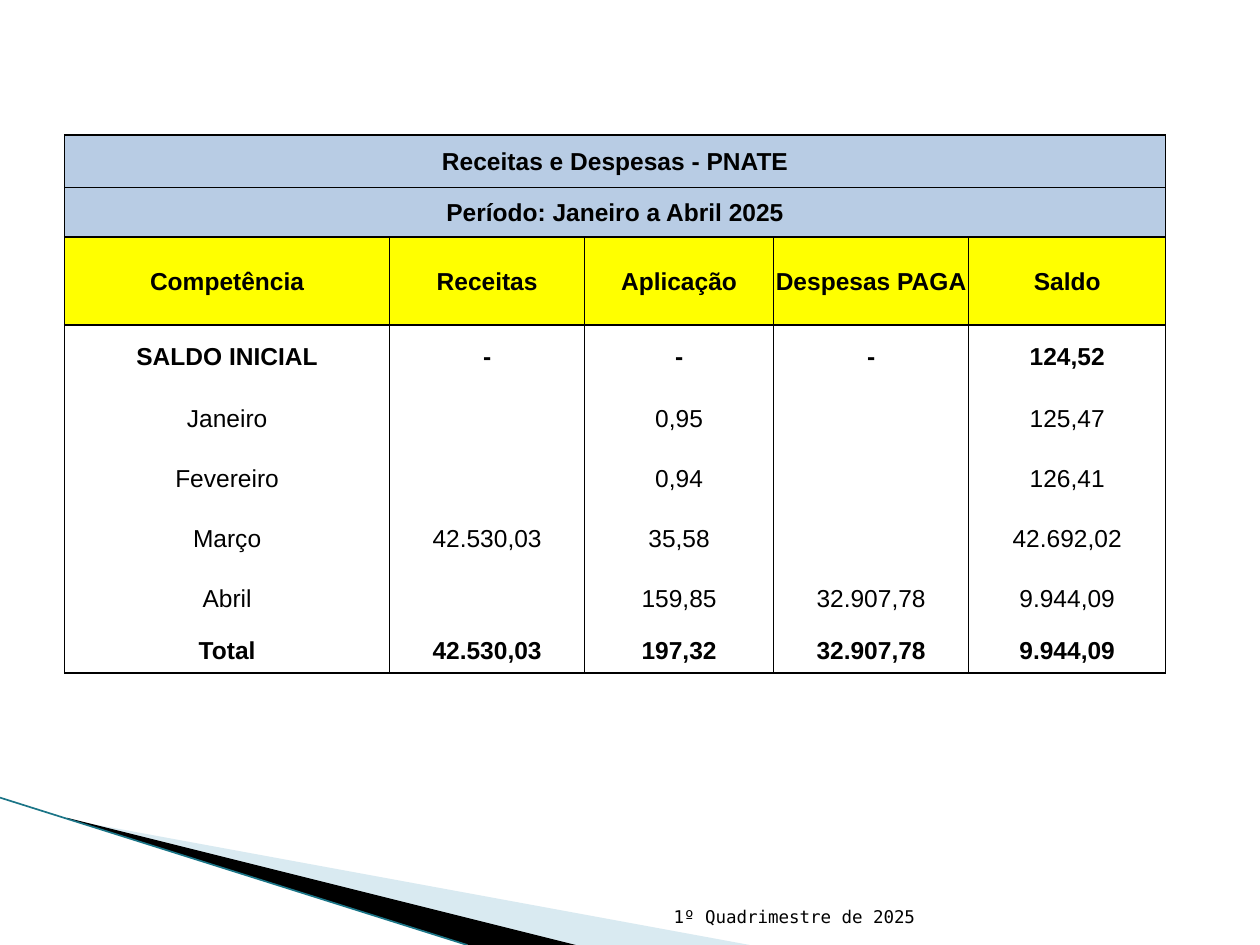
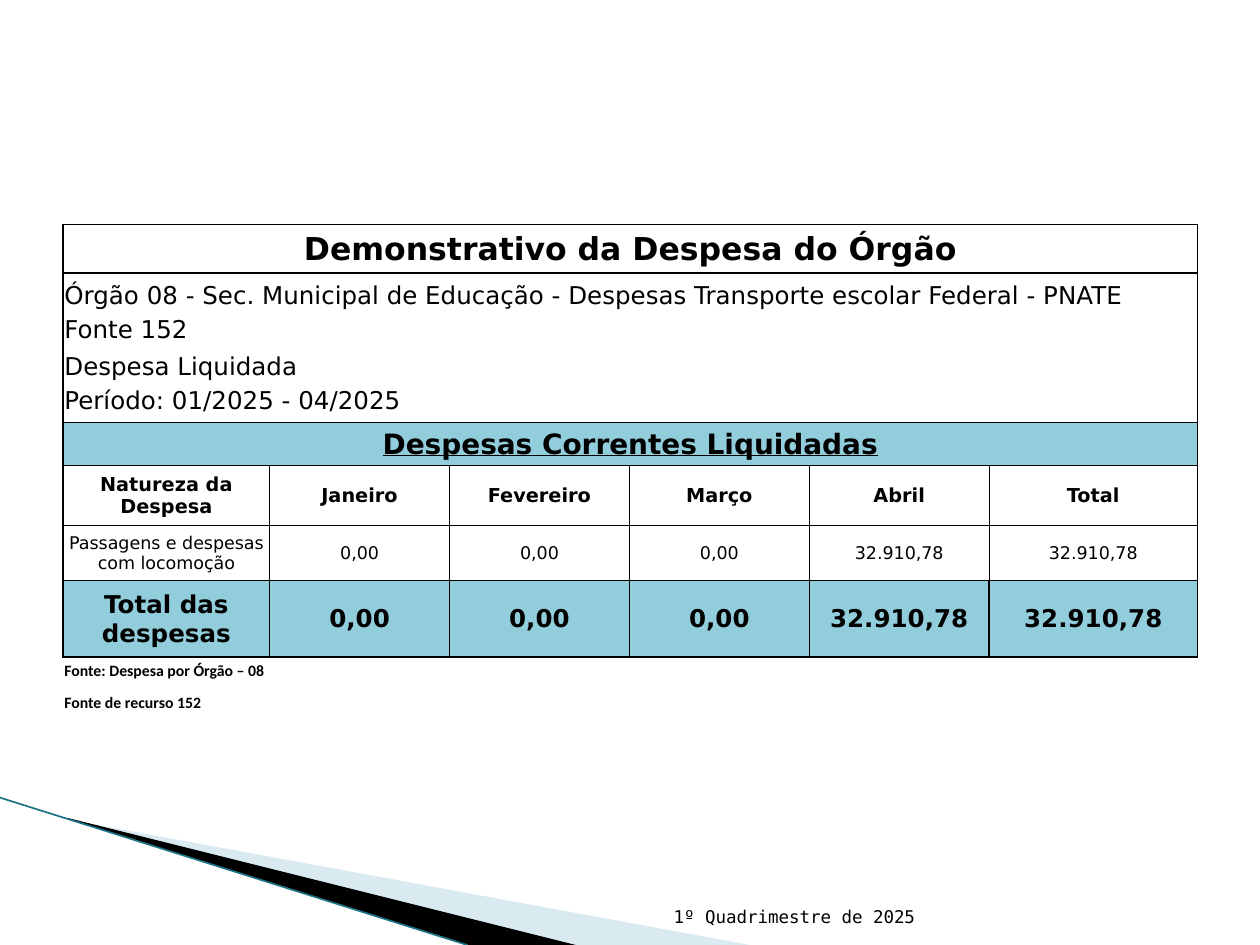
from lxml.etree import SubElement
from pptx import Presentation
from pptx.dml.color import RGBColor
from pptx.enum.shapes import MSO_CONNECTOR
from pptx.enum.text import MSO_ANCHOR as Anchor, PP_ALIGN as Align
from pptx.oxml import parse_xml
from pptx.oxml.ns import nsdecls, qn
from pptx.util import Pt

BLACK, WHITE, YELLOW = "000000", "FFFFFF", "FFFF00"
BLUE, AQUA, PALE_WAVE, WAVE_EDGE = "B8CCE4", "92CDDC", "A0CBDC", "1B7587"
FOOTER = "1º Quadrimestre de 2025"
BLANK_LAYOUT = 6


def color(value):
    return RGBColor.from_string(value)


def points(*values):
    return [Pt(value) for value in values]


class Deck:
    cell_format = dict(
        margin_left=Pt(0.7), margin_right=Pt(0.7), margin_top=Pt(0.7), margin_bottom=0
    )

    def __init__(self, presentation):
        self.presentation = presentation
        self.slide = None

    def add_slide(self):
        layout = self.presentation.slide_layouts[BLANK_LAYOUT]
        self.slide = self.presentation.slides.add_slide(layout)
        self.wave([(39.6, 468.5), (428.4, 540), (328.3, 540), (39.6, 468)], PALE_WAVE, 40)
        self.wave([(38.2, 467.3), (329, 540), (267.8, 540), (38.9, 468)], BLACK)
        self.line((0, 455.8), (267, 540), WAVE_EDGE, 0.95)
        self.footer(FOOTER)

    def wave(self, corners, fill, opacity=100):
        start, *others = [points(*corner) for corner in corners]
        builder = self.slide.shapes.build_freeform(*start)
        builder.add_line_segments(others, close=True)
        shape = builder.convert_to_shape()
        shape.shadow.inherit = False
        shape.fill.solid()
        shape.fill.fore_color.rgb = color(fill)
        shape.line.fill.background()
        if opacity < 100:
            tint = shape._element.spPr.find(qn("a:solidFill"))[0]
            SubElement(tint, qn("a:alpha"), val=str(opacity * 1000))

    def line(self, start, end, stroke, width):
        connector = self.slide.shapes.add_connector(
            MSO_CONNECTOR.STRAIGHT, *points(*start, *end)
        )
        connector.line.color.rgb = color(stroke)
        connector.line.width = Pt(width)
        SubElement(connector._element.spPr, qn("a:effectLst"))

    def footer(self, text):
        box = self.slide.shapes.add_textbox(*points(344.9, 504.7, 185, 28.8))
        frame = box.text_frame
        frame.word_wrap = True
        frame.vertical_anchor = Anchor.BOTTOM
        self.add_text(frame.paragraphs[0], text, Align.RIGHT, size=10, name="DejaVu Sans Mono")

    def add_text(self, paragraph, text, align, size, **font_format):
        paragraph.alignment = align
        if not text:
            paragraph._p.get_or_add_endParaRPr().set("sz", str(size * 100))
            return
        run = paragraph.add_run()
        run.text = text
        run.font.color.rgb = color(BLACK)
        for key, value in dict(font_format, size=Pt(size)).items():
            setattr(run.font, key, value)

    def table(self, left, top, widths, rows, font):
        frame = self.slide.shapes.add_table(
            len(rows), len(widths),
            *points(left, top, sum(widths), sum(row[0] for row in rows)),
        )
        table = frame.table
        table.first_row = table.horz_banding = False
        for column, width in zip(table.columns, widths):
            column.width = Pt(width)
        last = len(widths) - 1
        for index, (height, texts, style) in enumerate(rows):
            table.rows[index].height = Pt(height)
            merged = isinstance(texts, str)
            if merged:
                table.cell(index, 0).merge(table.cell(index, last))
                texts = [texts] + [""] * last
            above, below, outer, inner = style.get("borders", (1, 1, 1, 1))
            for column, text in enumerate(texts):
                cell = table.cell(index, column)
                for key, value in self.cell_format.items():
                    setattr(cell, key, value)
                cell.vertical_anchor = style.get("anchor", Anchor.MIDDLE)
                self.borders(cell, {
                    "L": outer if merged or column == 0 else inner,
                    "R": outer if merged or column == last else inner,
                    "T": above,
                    "B": below,
                })
                cell.fill.solid()
                cell.fill.fore_color.rgb = color(style.get("fill", WHITE))
                self.add_text(
                    cell.text_frame.paragraphs[0], text, style.get("align", Align.CENTER),
                    **{**font, **style.get("font", {})},
                )

    def borders(self, cell, sides):
        properties = cell._tc.get_or_add_tcPr()
        for side, width in sides.items():
            paint = (
                f'<a:solidFill><a:srgbClr val="{BLACK}"/></a:solidFill>'
                if width else "<a:noFill/>"
            )
            properties.append(parse_xml(
                f'<a:ln{side} {nsdecls("a")} w="{Pt(width)}">{paint}</a:ln{side}>'
            ))


def add_balance_slide(deck):
    deck.add_slide()
    heading = dict(fill=BLUE, font=dict(bold=True))
    labels = dict(fill=YELLOW, font=dict(bold=True))
    opening = dict(borders=(1, 0, 1, 1), font=dict(bold=True))
    month = dict(borders=(0, 0, 1, 1))
    total = dict(borders=(0, 1, 1, 1), font=dict(bold=True))
    months = [
        ["Janeiro", "", "0,95", "", "125,47"],
        ["Fevereiro", "", "0,94", "", "126,41"],
        ["Março", "42.530,03", "35,58", "", "42.692,02"],
        ["Abril", "", "159,85", "32.907,78", "9.944,09"],
    ]
    rows = [
        (30, "Receitas e Despesas - PNATE", heading),
        (28.3, "Período: Janeiro a Abril 2025", heading),
        (50.3, ["Competência", "Receitas", "Aplicação", "Despesas PAGA", "Saldo"], labels),
        (36, ["SALDO INICIAL", "-", "-", "-", "124,52"], opening),
        *[(34.3, values, month) for values in months],
        (25.7, ["Total", "42.530,03", "197,32", "32.907,78", "9.944,09"], total),
    ]
    widths = [185.8, 111.4, 108, 111.5, 112.6]
    deck.table(36.9, 77.2, widths, rows, dict(name="Arial", size=14))


def add_expense_slide(deck):
    deck.add_slide()

    def detail(above, below, anchor):
        return dict(
            borders=(above, below, 1, 0), anchor=anchor, align=Align.LEFT, font=dict(size=14)
        )

    def footnote(above):
        return dict(
            borders=(above, 0, 0, 0), anchor=Anchor.BOTTOM, align=Align.LEFT,
            font=dict(name="Calibri", size=9, bold=True),
        )

    title = dict(font=dict(size=18, bold=True))
    section = dict(fill=AQUA, font=dict(size=16, bold=True, underline=True))
    labels = dict(borders=(1, 0.5, 1, 0.5), font=dict(size=11, bold=True))
    values = dict(borders=(0.5, 1, 1, 0.5))
    total = dict(fill=AQUA, font=dict(size=14, bold=True))
    amounts = ["0,00"] * 3 + ["32.910,78"] * 2
    months = ["Janeiro", "Fevereiro", "Março", "Abril"]
    rows = [
        (27.8, "Demonstrativo da Despesa do Órgão", title),
        (21.4, "Órgão 08 - Sec. Municipal de Educação - Despesas Transporte escolar Federal - PNATE",
         detail(1, 0, Anchor.BOTTOM)),
        (21.4, "Fonte 152", detail(0, 0, Anchor.MIDDLE)),
        (21.4, "Despesa Liquidada", detail(0, 0, Anchor.MIDDLE)),
        (21.4, "Período: 01/2025 - 04/2025", detail(0, 1, Anchor.TOP)),
        (24.3, "Despesas Correntes Liquidadas", section),
        (34.4, ["Natureza da Despesa", *months, "Total"], labels),
        (31.4, ["Passagens e despesas com locomoção", *amounts], values),
        (43.8, ["Total das despesas", *amounts], total),
        (13.7, ["Fonte: Despesa por Órgão – 08"] + [""] * 5, footnote(1)),
        (18, ["Fonte de recurso 152"] + [""] * 5, footnote(0)),
    ]
    widths = [118, *[102.8] * 4, 119]
    deck.table(36.1, 128.3, widths, rows, dict(name="DejaVu Sans", size=10))


def main():
    presentation = Presentation()
    presentation.slide_width, presentation.slide_height = points(720, 540)
    deck = Deck(presentation)
    add_balance_slide(deck)
    add_expense_slide(deck)
    presentation.save("out.pptx")


if __name__ == "__main__":
    main()
